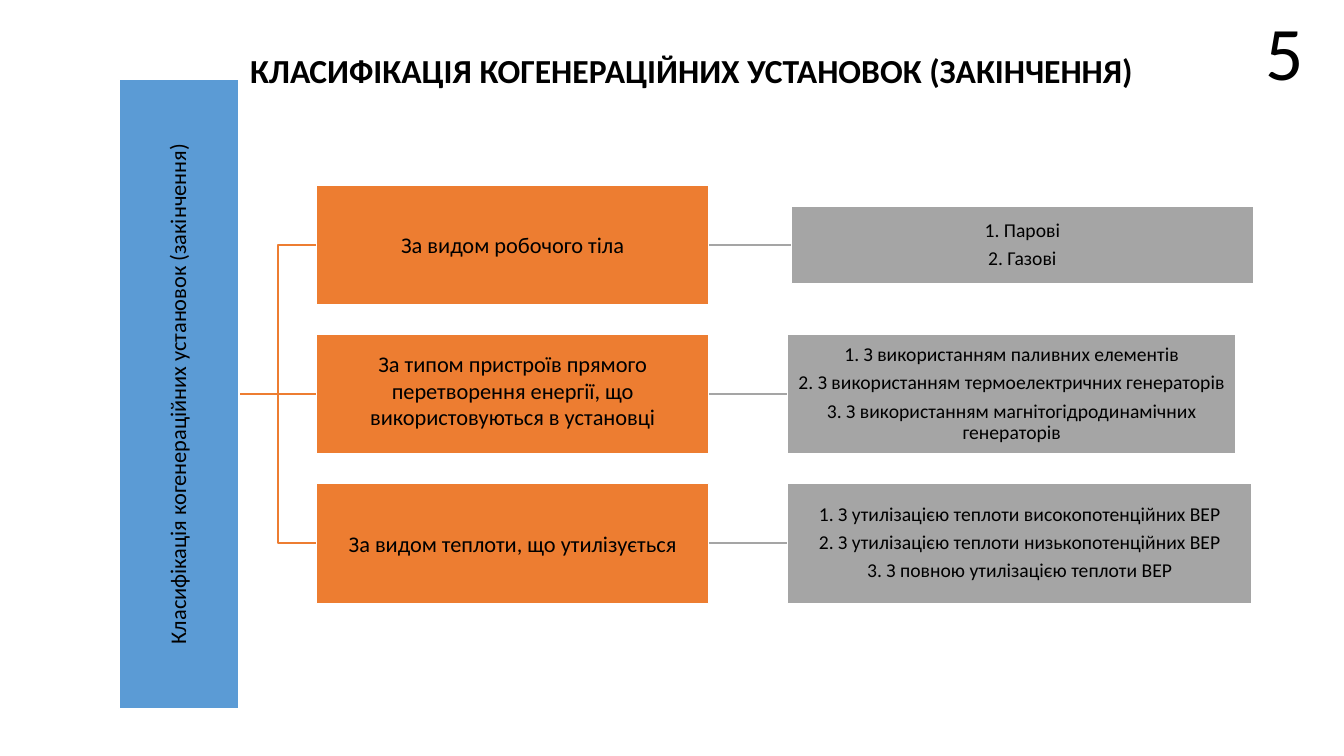
from lxml import etree
from pptx import Presentation
from pptx.dml.color import RGBColor
from pptx.enum.shapes import MSO_CONNECTOR as Connector, MSO_SHAPE as Shape
from pptx.enum.text import MSO_ANCHOR as Anchor, PP_ALIGN as Align
from pptx.oxml.ns import qn
from pptx.util import Inches, Pt

BLACK = RGBColor(0x00, 0x00, 0x00)
WHITE = RGBColor(0xFF, 0xFF, 0xFF)
BLUE = RGBColor(0x5B, 0x9B, 0xD5)
ORANGE = RGBColor(0xED, 0x7D, 0x31)
GRAY = RGBColor(0xA5, 0xA5, 0xA5)

# Grid of the tree, in inches
ROW_HEIGHT = 1.19
ROW_PITCH = 1.48
ROOT_WIDTH, ROOT_HEIGHT = 1.19, 6.24
CRITERION_LEFT, CRITERION_WIDTH = 1.96, 3.89

ROOT_TEXT = "Класифікація когенераційних установок (закінчення)"
# Criterion, its types, left and size of the types box within the tree
BRANCHES = [
    ("За видом робочого тіла",
     ["1. Парові", "2. Газові"], 6.67, 4.58, 0.77),
    ("За типом пристроїв прямого перетворення енергії, що використовуються в установці",
     ["1. З використанням паливних елементів",
      "2. З використанням термоелектричних генераторів",
      "3. З використанням магнітогідродинамічних генераторів"], 6.63, 4.45, ROW_HEIGHT),
    ("За видом теплоти, що утилізується",
     ["1. З утилізацією теплоти високопотенційних ВЕР",
      "2. З утилізацією теплоти низькопотенційних ВЕР",
      "3. З повною утилізацією теплоти ВЕР"], 6.63, 4.61, ROW_HEIGHT),
]


def write_lines(frame, lines, size, spacing=0.9, bold=False):
    for index, line in enumerate(lines):
        paragraph = frame.add_paragraph() if index else frame.paragraphs[0]
        paragraph.text = line
        paragraph.alignment = Align.CENTER
        paragraph.line_spacing = spacing
        if index:
            paragraph.space_before = Pt(5)
        font = paragraph.font
        font.name, font.size, font.bold = "Calibri", Pt(size), bold
        font.color.rgb = BLACK


def add_text(slide, box, text, size, spacing, bold=False, wrap=True):
    frame = slide.shapes.add_textbox(*map(Inches, box)).text_frame
    frame.word_wrap = wrap
    write_lines(frame, [text], size, spacing, bold)


def add_box(slide, center_x, center_y, width, height, color, lines, size, spacing=0.9):
    shape = slide.shapes.add_shape(
        Shape.RECTANGLE, Inches(center_x - width / 2), Inches(center_y - height / 2),
        Inches(width), Inches(height))
    shape.shadow.inherit = False
    shape.fill.solid()
    shape.fill.fore_color.rgb = color
    shape.line.color.rgb = WHITE
    shape.line.width = Pt(1)
    frame = shape.text_frame
    frame.word_wrap = True
    frame.vertical_anchor = Anchor.MIDDLE
    frame.margin_left = frame.margin_right = Inches(0.01)
    frame.margin_top = frame.margin_bottom = Inches(0.01)
    write_lines(frame, lines, size, spacing)
    return shape


def add_link(slide, start, end, color):
    kind = Connector.STRAIGHT if start[1] == end[1] else Connector.ELBOW
    link = slide.shapes.add_connector(kind, *map(Inches, start + end))
    link.line.color.rgb = color
    link.line.width = Pt(1.5)
    etree.SubElement(link._element.spPr, qn("a:effectLst"))


def add_tree(slide, left, top):
    middle = top + ROOT_HEIGHT / 2
    rows = [middle + (index - 1) * ROW_PITCH for index in range(len(BRANCHES))]
    criterion_left = left + CRITERION_LEFT
    criterion_right = criterion_left + CRITERION_WIDTH

    # Links lie behind the boxes
    for y, (_, _, types_left, _, _) in zip(rows, BRANCHES):
        add_link(slide, (left + ROOT_WIDTH, middle), (criterion_left, y), ORANGE)
        add_link(slide, (criterion_right, y), (left + types_left, y), GRAY)

    # Root, turned to read upwards
    root = add_box(slide, left + ROOT_WIDTH / 2, middle, ROOT_HEIGHT, ROOT_WIDTH,
                   BLUE, [ROOT_TEXT], 16)
    root.rotation = 270

    # Criteria and their types
    for y, (criterion, types, types_left, width, height) in zip(rows, BRANCHES):
        box = add_box(slide, criterion_left + CRITERION_WIDTH / 2, y, CRITERION_WIDTH,
                      ROW_HEIGHT, ORANGE, [criterion], 16, 1.0)
        if y == middle:
            box.text_frame.margin_bottom = Inches(0.09)
        add_box(slide, left + types_left + width / 2, y, width, height, GRAY, types, 14)


def main():
    presentation = Presentation()
    presentation.slide_width = Inches(13.33)
    presentation.slide_height = Inches(7.5)
    slide = presentation.slides.add_slide(presentation.slide_layouts[6])

    # Title, tree and page number
    add_text(slide, (1.86, 0.49, 10, 0.71),
             "КЛАСИФІКАЦІЯ КОГЕНЕРАЦІЙНИХ УСТАНОВОК (ЗАКІНЧЕННЯ)", 24, 0.9, bold=True)
    add_tree(slide, 1.18, 0.79)
    add_text(slide, (12.45, 0, 0.59, 1.01), "5", 54, 1.0, wrap=False)

    presentation.save("out.pptx")


if __name__ == "__main__":
    main()
